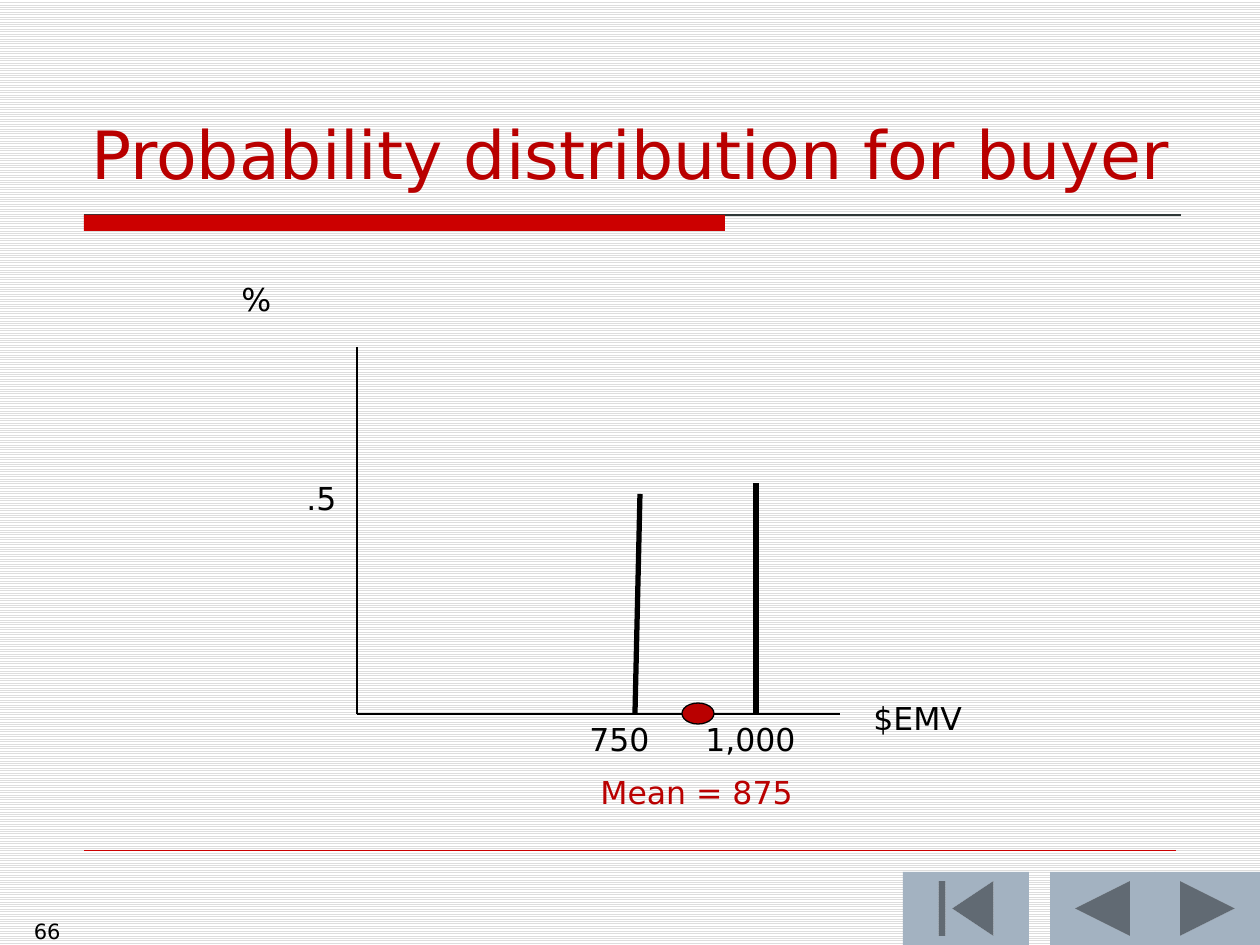
from pptx import Presentation
from pptx.dml.color import RGBColor
from pptx.enum.dml import MSO_PATTERN
from pptx.enum.shapes import MSO_CONNECTOR, MSO_SHAPE
from pptx.enum.text import MSO_ANCHOR, MSO_AUTO_SIZE, PP_ALIGN
from pptx.oxml.ns import qn
from pptx.util import Pt
from lxml import etree

STRAIGHT = MSO_CONNECTOR.STRAIGHT
RECTANGLE = MSO_SHAPE.RECTANGLE
DOT = MSO_SHAPE.FLOWCHART_CONNECTOR
BUTTON_BEGINNING = MSO_SHAPE.ACTION_BUTTON_BEGINNING
BUTTON_BACK = MSO_SHAPE.ACTION_BUTTON_BACK_OR_PREVIOUS
BUTTON_NEXT = MSO_SHAPE.ACTION_BUTTON_FORWARD_OR_NEXT
LIGHT_HORIZONTAL = MSO_PATTERN.LIGHT_HORIZONTAL
TOP, BOTTOM = MSO_ANCHOR.TOP, MSO_ANCHOR.BOTTOM
LEFT, RIGHT = PP_ALIGN.LEFT, PP_ALIGN.RIGHT
GROW = MSO_AUTO_SIZE.SHAPE_TO_FIT_TEXT

FONT = "DejaVu Sans"
BLACK = RGBColor(0x00, 0x00, 0x00)
WHITE = RGBColor(0xFF, 0xFF, 0xFF)
STRIPE = RGBColor(0xDD, 0xDD, 0xDD)
RED = RGBColor(0xCC, 0x00, 0x00)
DARK_RED = RGBColor(0xB9, 0x00, 0x00)
CHARCOAL = RGBColor(0x30, 0x38, 0x38)
BLUE_GREY = RGBColor(0xA3, 0xB2, 0xC1)


def px(n):
    """Convert pixels at 126 to the inch into EMU."""
    return round(n * 914400 / 126)


def set_background(s):
    """Fill the slide with thin horizontal stripes."""
    fill = s.background.fill
    fill.patterned()
    fill.pattern = LIGHT_HORIZONTAL
    fill.fore_color.rgb = STRIPE
    fill.back_color.rgb = WHITE


def add_line(s, x1, y1, x2, y2, color=BLACK, width=0.75):
    """Add a straight line without shadow."""
    line = s.shapes.add_connector(STRAIGHT, px(x1), px(y1), px(x2), px(y2))
    line.line.color.rgb = color
    line.line.width = Pt(width)
    etree.SubElement(line._element.spPr, qn("a:effectLst"))


def add_filled(s, kind, x, y, w, h, fill, line=None):
    """Add a filled preset shape, outlined if a line colour is given."""
    sp = s.shapes.add_shape(kind, px(x), px(y), px(w), px(h))
    sp.shadow.inherit = False
    sp.fill.solid()
    sp.fill.fore_color.rgb = fill
    if line is None:
        sp.line.fill.background()
    else:
        sp.line.color.rgb = line
        sp.line.width = Pt(0.75)


def add_text(s, text, x, y, w, h, size=18, color=BLACK, align=LEFT, anchor=TOP):
    """Add a one-line text box and return it."""
    sp = s.shapes.add_textbox(px(x), px(y), px(w), px(h))
    tf = sp.text_frame
    tf.word_wrap = True
    tf.vertical_anchor = anchor
    p = tf.paragraphs[0]
    p.text = text
    p.alignment = align
    p.font.name = FONT
    p.font.size = Pt(size)
    p.font.color.rgb = color
    return sp


def add_label(s, text, x, y, w, color=BLACK):
    """Add a diagram label whose box grows with its text."""
    add_text(s, text, x, y, w, 50, color=color).text_frame.auto_size = GROW


def add_frame(s):
    """Add the title rule, footer rule and navigation buttons."""
    add_line(s, 84, 215, 1181, 215, CHARCOAL)
    add_filled(s, RECTANGLE, 84, 215, 641, 16, RED)
    add_line(s, 84, 850, 1176, 850, RED, 0.25)
    for kind, x, w in (
        (BUTTON_BACK, 1050, 105),
        (BUTTON_BEGINNING, 903, 126),
        (BUTTON_NEXT, 1155, 105),
    ):
        add_filled(s, kind, x, 872, w, 73, BLUE_GREY)


def add_distribution(s):
    """Add the axes, probability bars, labels and mean marker."""
    axis_x, axis_y = 357, 714
    add_line(s, axis_x, 347, axis_x, axis_y)
    add_line(s, axis_x, axis_y, 840, axis_y)
    add_line(s, 756, axis_y, 756, 483, width=3)
    add_line(s, 635, axis_y, 640, 494, width=3)
    for text, x, y, w in (
        ("$EMV", 861, 693, 116),
        ("750", 577, 714, 116),
        ("1,000", 693, 714, 126),
        ("%", 229, 274, 59),
        (".5", 294, 473, 57),
    ):
        add_label(s, text, x, y, w)
    add_label(s, "Mean = 875", 588, 767, 219, DARK_RED)
    add_filled(s, DOT, 682, 703, 32, 21, DARK_RED, BLACK)


def main():
    """Build and save the slide."""
    prs = Presentation()
    prs.slide_width, prs.slide_height = px(1260), px(945)
    s = prs.slides.add_slide(prs.slide_layouts[6])
    set_background(s)
    add_frame(s)
    add_text(s, "Probability distribution for buyer", 79, 42, 1181, 157,
             38, DARK_RED, anchor=BOTTOM)
    add_text(s, "66", 0, 912, 73, 33, 12, align=RIGHT)
    add_distribution(s)
    prs.save("out.pptx")


if __name__ == "__main__":
    main()
